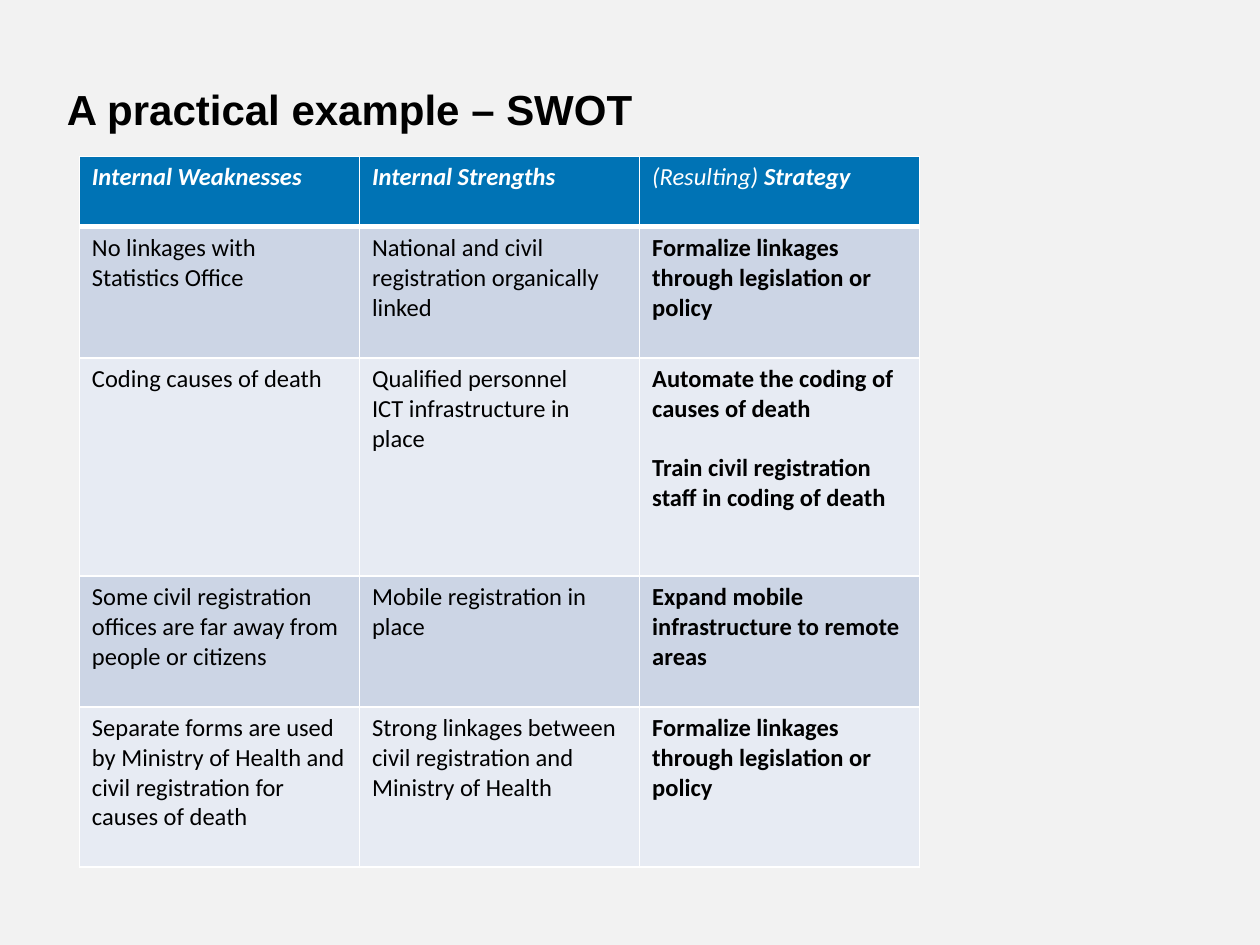
"""Build the SWOT example slide: a title above a table of strategies."""
from pptx import Presentation
from pptx.dml.color import RGBColor as RGB
from pptx.enum.text import MSO_ANCHOR as Anchor, PP_ALIGN as Align
from pptx.oxml import parse_xml
from pptx.oxml.ns import nsdecls
from pptx.util import Inches, Pt


def color(fmt, value):
    fmt.rgb = RGB.from_string(value)


def add_run(p, text, c, **fmt):
    r = p.add_run()
    r.text = text
    for name, value in fmt.items():
        setattr(r.font, name, value)
    color(r.font.color, c)


prs = Presentation()
prs.slide_width, prs.slide_height = Inches(10), Inches(7.5)
s = prs.slides.add_slide(prs.slide_layouts[5])
s.background.fill.solid()
color(s.background.fill.fore_color, "F2F2F2")

title = s.shapes.title
title.left, title.top = Inches(0.43), Inches(0.3)
title.width, title.height = Inches(5.43), Inches(1.12)
tf = title.text_frame
tf.word_wrap = True
tf.vertical_anchor = Anchor.MIDDLE
tf.paragraphs[0].alignment = Align.LEFT
add_run(tf.paragraphs[0], "A practical example – SWOT", "000000",
        name="Arial", size=Pt(24), bold=True)

header = ["Internal Weaknesses", "Internal Strengths", "Strategy"]
body = [
    ["No linkages with Statistics Office",
     "National and civil registration organically linked",
     "Formalize linkages through legislation or policy"],
    ["Coding causes of death",
     "Qualified personnel\nICT infrastructure in place",
     "Automate the coding of causes of death\n"
     "Train civil registration staff in coding of death"],
    ["Some civil registration offices are far away from people or citizens",
     "Mobile registration in place",
     "Expand mobile infrastructure to remote areas"],
    ["Separate forms are used by Ministry of Health and civil registration "
     "for causes of death",
     "Strong linkages between civil registration and Ministry of Health",
     "Formalize linkages through legislation or policy"],
]
heights = [0.56, 1.04, 1.73, 1.04, 1.27]
rows = [header] + body
STRATEGY = 2

table = s.shapes.add_table(len(rows), len(header), Inches(0.63), Inches(1.24),
                           Inches(6.67), Inches(sum(heights))).table
for col in table.columns:
    col.width = Inches(6.67 / len(header))

for i, (texts, height) in enumerate(zip(rows, heights)):
    table.rows[i].height = Inches(height)
    is_header = i == 0
    fill = "0073B5" if is_header else ("CCD5E5" if i % 2 else "E7EBF3")
    ink = "FFFFFF" if is_header else "000000"
    for j, text in enumerate(texts):
        cell = table.cell(i, j)
        tcPr = cell._tc.get_or_add_tcPr()
        for side in "LRTB":
            thick = (is_header and side == "B") or (i == 1 and side == "T")
            tcPr.append(parse_xml(
                f'<a:ln{side} {nsdecls("a")} w="{Pt(3 if thick else 1)}">'
                '<a:solidFill><a:srgbClr val="FFFFFF"/></a:solidFill>'
                f'</a:ln{side}>'))
        cell.fill.solid()
        color(cell.fill.fore_color, fill)
        fmt = {"name": "Calibri", "size": Pt(14), "italic": is_header}
        tf = cell.text_frame
        for k, line in enumerate(text.split("\n")):
            p = tf.add_paragraph() if k else tf.paragraphs[0]
            if k and j == STRATEGY:
                p.space_before = Pt(17)
            if is_header and j == STRATEGY:
                add_run(p, "(Resulting) ", ink, bold=False, **fmt)
            add_run(p, line, ink, bold=is_header or j == STRATEGY, **fmt)

prs.save("out.pptx")
